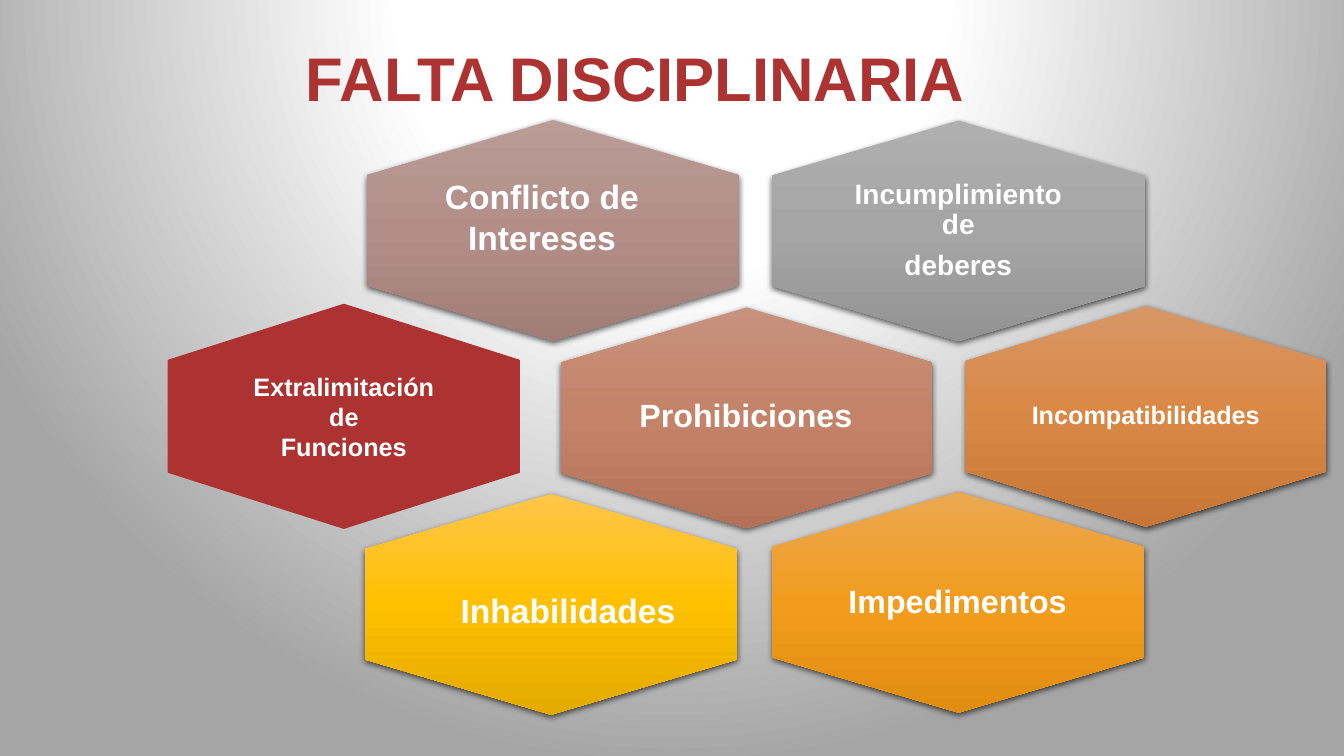
from lxml import etree
from pptx import Presentation
from pptx.dml.color import RGBColor
from pptx.enum.shapes import MSO_SHAPE
from pptx.enum.text import MSO_ANCHOR, PP_ALIGN
from pptx.oxml import parse_xml
from pptx.oxml.ns import nsdecls, qn
from pptx.util import Inches, Pt

HEXAGON = MSO_SHAPE.HEXAGON
TOP, MIDDLE = MSO_ANCHOR.TOP, MSO_ANCHOR.MIDDLE
LEFT, CENTER = PP_ALIGN.LEFT, PP_ALIGN.CENTER

RED = RGBColor(0xAD, 0x33, 0x33)
WHITE = RGBColor(0xFF, 0xFF, 0xFF)
SILVER = RGBColor(0xA5, 0xA5, 0xA5)
GRAYS = RGBColor(0xAF, 0xAF, 0xAF), SILVER, RGBColor(0x93, 0x93, 0x93)
MAUVES = RGBColor(0xBA, 0x9C, 0x97), RGBColor(0xB3, 0x8E, 0x88), RGBColor(0xA1, 0x7D, 0x77)
CLAYS = RGBColor(0xC7, 0x92, 0x7E), RGBColor(0xC4, 0x82, 0x68), RGBColor(0xB3, 0x71, 0x57)
COPPERS = RGBColor(0xD8, 0x97, 0x66), RGBColor(0xD9, 0x87, 0x44), RGBColor(0xC8, 0x76, 0x35)
ORANGES = RGBColor(0xEC, 0xA8, 0x52), RGBColor(0xF1, 0x9C, 0x1D), RGBColor(0xE1, 0x8D, 0x0F)
YELLOWS = RGBColor(0xFF, 0xC6, 0x4B), RGBColor(0xFF, 0xC0, 0x00), RGBColor(0xE3, 0xAA, 0x00)


def gradient(stops, direction):
    """Return a gradFill element from (percent, colour) stops and direction XML."""
    gs = "".join(f'<a:gs pos="{pos * 1000}"><a:srgbClr val="{color}"/></a:gs>'
                 for pos, color in stops)
    return parse_xml(f'<a:gradFill {nsdecls("a")} rotWithShape="0">'
                     f'<a:gsLst>{gs}</a:gsLst>{direction}</a:gradFill>')


def write(tf, lines, size, color=WHITE, align=CENTER, **spacing):
    for i, line in enumerate(lines):
        p = tf.paragraphs[0] if i == 0 else tf.add_paragraph()
        p.alignment = align
        for name, value in spacing.items():
            setattr(p, name, value)
        r = p.add_run()
        r.text = line
        for name, value in {"name": "Arial", "size": Pt(size), "bold": True}.items():
            setattr(r.font, name, value)
        r.font.color.rgb = color


prs = Presentation()
prs.slide_width, prs.slide_height = Inches(13.33), Inches(7.5)
s = prs.slides.add_slide(prs.slide_layouts[6])

# Background glow centred above the slide
s.background.fill.solid()
bg_pr = s.background._cSld.find(qn("p:bg")).find(qn("p:bgPr"))
bg_pr.replace(bg_pr[0], gradient(
    [(0, WHITE), (35, WHITE), (100, SILVER)],
    '<a:path path="circle"><a:fillToRect l="50000" t="-80000" r="50000" b="180000"/></a:path>'))

# Shaded hexagons: left and top before rotation, height, colours
HEX_WIDTH = 2.19
for left, top, height, colors in [
    (8.41, 0.44, 3.7, GRAYS),
    (4.39, 0.44, 3.69, MAUVES),
    (6.31, 2.3, 3.69, CLAYS),
    (10.27, 2.34, 3.58, COPPERS),
    (8.41, 4.13, 3.69, ORANGES),
    (4.37, 4.15, 3.69, YELLOWS),
]:
    sp = s.shapes.add_shape(HEXAGON, Inches(left), Inches(top),
                            Inches(HEX_WIDTH), Inches(height))
    sp.rotation = 90
    sp.line.fill.background()
    sp.fill.solid()
    sp_pr = sp._element.spPr
    sp_pr.replace(sp_pr.find(qn("a:solidFill")),
                  gradient(zip((0, 50, 100), colors), '<a:lin ang="5400000" scaled="0"/>'))
    sp.shadow.inherit = False
    shadow = etree.SubElement(sp_pr.find(qn("a:effectLst")), qn("a:outerShdw"),
                              blurRad=str(Pt(4.5)), dist=str(Pt(1.5)), dir="5400000",
                              algn="ctr", rotWithShape="0")
    black = etree.SubElement(shadow, qn("a:srgbClr"), val="000000")
    etree.SubElement(black, qn("a:alpha"), val="63000")

# Wrapped labels, centred in their hexagons
for left, top, width, inset, size, lines in [
    (8.27, 1.56, 2.47, 0.08, 20, ["Incumplimiento de", "deberes"]),
    (6.17, 3.41, 2.46, 0.1, 23, ["Prohibiciones"]),
    (10.17, 3.4, 2.39, 0, 18, ["Incompatibilidades"]),
    (8.27, 5.25, 2.46, 0.1, 23, ["Impedimentos"]),
]:
    tf = s.shapes.add_textbox(Inches(left), Inches(top), Inches(width), Inches(1.46)).text_frame
    tf.word_wrap = True
    tf.vertical_anchor = MIDDLE
    for side in ("left", "top", "right", "bottom"):
        setattr(tf, f"margin_{side}", Inches(inset))
    write(tf, lines, size, line_spacing=0.9, space_after=Pt(round(size * 0.35)))

# Title and free labels
for left, top, width, height, size, color, align, lines in [
    (2.93, 0.35, 6.81, 0.84, 44, RED, LEFT, ["FALTA DISCIPLINARIA"]),
    (4.17, 1.7, 2.41, 1.21, 24, WHITE, CENTER, ["Conflicto de", "Intereses"]),
    (4.47, 5.8, 2.35, 0.81, 24, WHITE, LEFT, ["Inhabilidades"]),
]:
    tf = s.shapes.add_textbox(Inches(left), Inches(top), Inches(width), Inches(height)).text_frame
    tf.word_wrap = False
    tf.vertical_anchor = TOP
    write(tf, lines, size, color, align)

# Flat red hexagon; its text is turned back upright
sp = s.shapes.add_shape(HEXAGON, Inches(2.3), Inches(2.39), Inches(2.22), Inches(3.48))
sp.rotation = 90
sp.shadow.inherit = False
sp.fill.solid()
sp.fill.fore_color.rgb = RED
sp.line.color.rgb = RED
sp.line.width = Pt(1)
tf = sp.text_frame
tf.word_wrap = True
tf.vertical_anchor = MIDDLE
tf._txBody.bodyPr.set("vert", "vert270")
write(tf, ["Extralimitación de", "Funciones"], 18)

prs.save("out.pptx")
